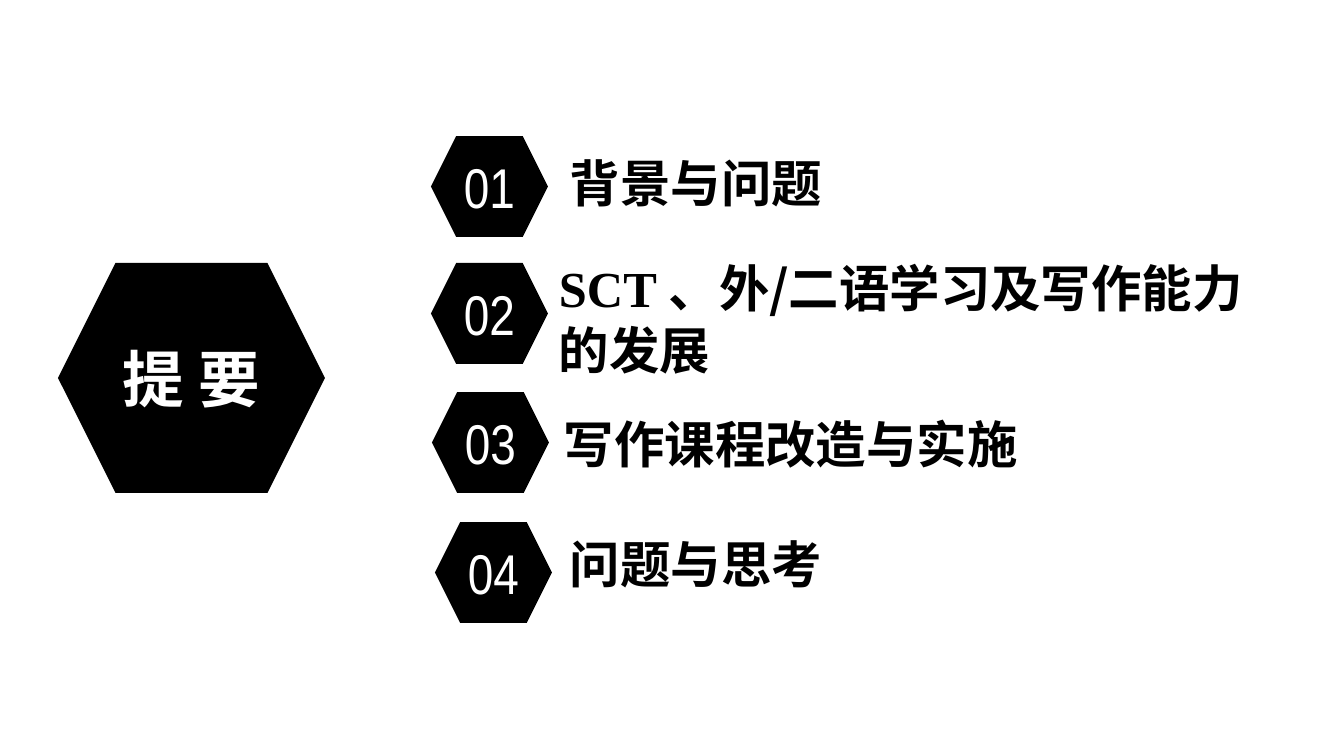
from dataclasses import dataclass

from lxml.etree import SubElement
from pptx import Presentation
from pptx.dml.color import RGBColor
from pptx.enum.lang import MSO_LANGUAGE_ID
from pptx.enum.shapes import MSO_SHAPE
from pptx.enum.text import MSO_ANCHOR, MSO_AUTO_SIZE, PP_ALIGN
from pptx.oxml.ns import qn
from pptx.shapes.autoshape import Shape
from pptx.slide import Slide
from pptx.text.text import TextFrame
from pptx.util import Emu, Pt

EMU_PER_PX = 914400 / 100.8
COLORS = {"ink": "000000", "paper": "FFFFFF"}
CHINESE, SERIF, NARROW = "Noto Sans CJK SC", "Times New Roman", "Arial Narrow"


@dataclass(frozen=True)
class Box:
    left: int
    top: int
    width: int
    height: int

    def emu(self) -> tuple[Emu, ...]:
        sides = (self.left, self.top, self.width, self.height)
        return tuple(Emu(round(side * EMU_PER_PX)) for side in sides)


@dataclass(frozen=True)
class Span:
    text: str
    font: str = CHINESE


@dataclass(frozen=True)
class Topic:
    badge_left: int
    badge_top: int
    label: Box
    lines: tuple[tuple[Span, ...], ...]


TITLE_BOX = Box(58, 263, 267, 230)
TOPICS = (
    Topic(431, 136, Box(560, 146, 414, 72), ((Span("背景与问题"),),)),
    Topic(431, 263, Box(549, 251, 741, 132),
          ((Span("SCT 、", SERIF), Span("外/二语学习及写作能力")), (Span("的发展"),))),
    Topic(432, 392, Box(554, 407, 493, 72), ((Span("写作课程改造与实施"),),)),
    Topic(435, 522, Box(560, 527, 484, 72), ((Span("问题与思考"),),)),
)


def write_text(frame: TextFrame, lines: tuple[tuple[Span, ...], ...], *, size: int,
               color: str, bold: bool = False, align: PP_ALIGN = PP_ALIGN.LEFT,
               line_height: int | None = None) -> None:
    for index, spans in enumerate(lines):
        para = frame.paragraphs[0] if index == 0 else frame.add_paragraph()
        para.alignment = align
        para.line_spacing = Pt(line_height) if line_height else 1.0
        for span in spans:
            run = para.add_run()
            run.text = span.text
            run.font.size, run.font.bold = Pt(size), bold
            run.font.color.rgb = RGBColor.from_string(COLORS[color])
            run.font.language_id = MSO_LANGUAGE_ID.SIMPLIFIED_CHINESE
            run.font.name = span.font
            # Chinese glyphs take the East Asian typeface
            SubElement(run.font._element, qn("a:ea"), typeface=CHINESE)


def center_text(frame: TextFrame) -> None:
    frame.margin_left = frame.margin_right = frame.margin_top = frame.margin_bottom = 0
    frame.vertical_anchor = MSO_ANCHOR.MIDDLE
    frame.auto_size = MSO_AUTO_SIZE.NONE
    frame.word_wrap = False


def add_hexagon(slide: Slide, box: Box) -> Shape:
    hexagon = slide.shapes.add_shape(MSO_SHAPE.HEXAGON, *box.emu())
    hexagon.shadow.inherit = False
    hexagon.fill.solid()
    hexagon.fill.fore_color.rgb = RGBColor.from_string(COLORS["ink"])
    hexagon.line.fill.background()
    return hexagon


def add_title(slide: Slide) -> None:
    hexagon = add_hexagon(slide, TITLE_BOX)
    title = slide.shapes.title
    title.left, title.top, title.width, title.height = TITLE_BOX.emu()
    title.element.addprevious(hexagon.element)
    center_text(title.text_frame)
    write_text(title.text_frame, ((Span("提 要"),),), size=44, color="paper",
               bold=True, align=PP_ALIGN.CENTER)


def add_topic(slide: Slide, number: int, topic: Topic) -> None:
    badge = add_hexagon(slide, Box(topic.badge_left, topic.badge_top, 117, 101))
    center_text(badge.text_frame)
    write_text(badge.text_frame, ((Span(f"{number:02}", NARROW),),), size=40,
               color="paper", align=PP_ALIGN.CENTER)

    label = slide.shapes.add_textbox(*topic.label.emu())
    label.text_frame.word_wrap = True
    label.text_frame.auto_size = MSO_AUTO_SIZE.SHAPE_TO_FIT_TEXT
    write_text(label.text_frame, topic.lines, size=36, color="ink", bold=True,
               line_height=44)


def main() -> None:
    deck = Presentation()
    page = Box(0, 0, 1344, 756).emu()
    deck.slide_width, deck.slide_height = page[2:]
    title_only = deck.slide_layouts.get_by_name("Title Only")
    slide = deck.slides.add_slide(title_only)

    # Heading on the left, numbered topics on the right
    add_title(slide)
    for number, topic in enumerate(TOPICS, start=1):
        add_topic(slide, number, topic)

    deck.save("out.pptx")


if __name__ == "__main__":
    main()
